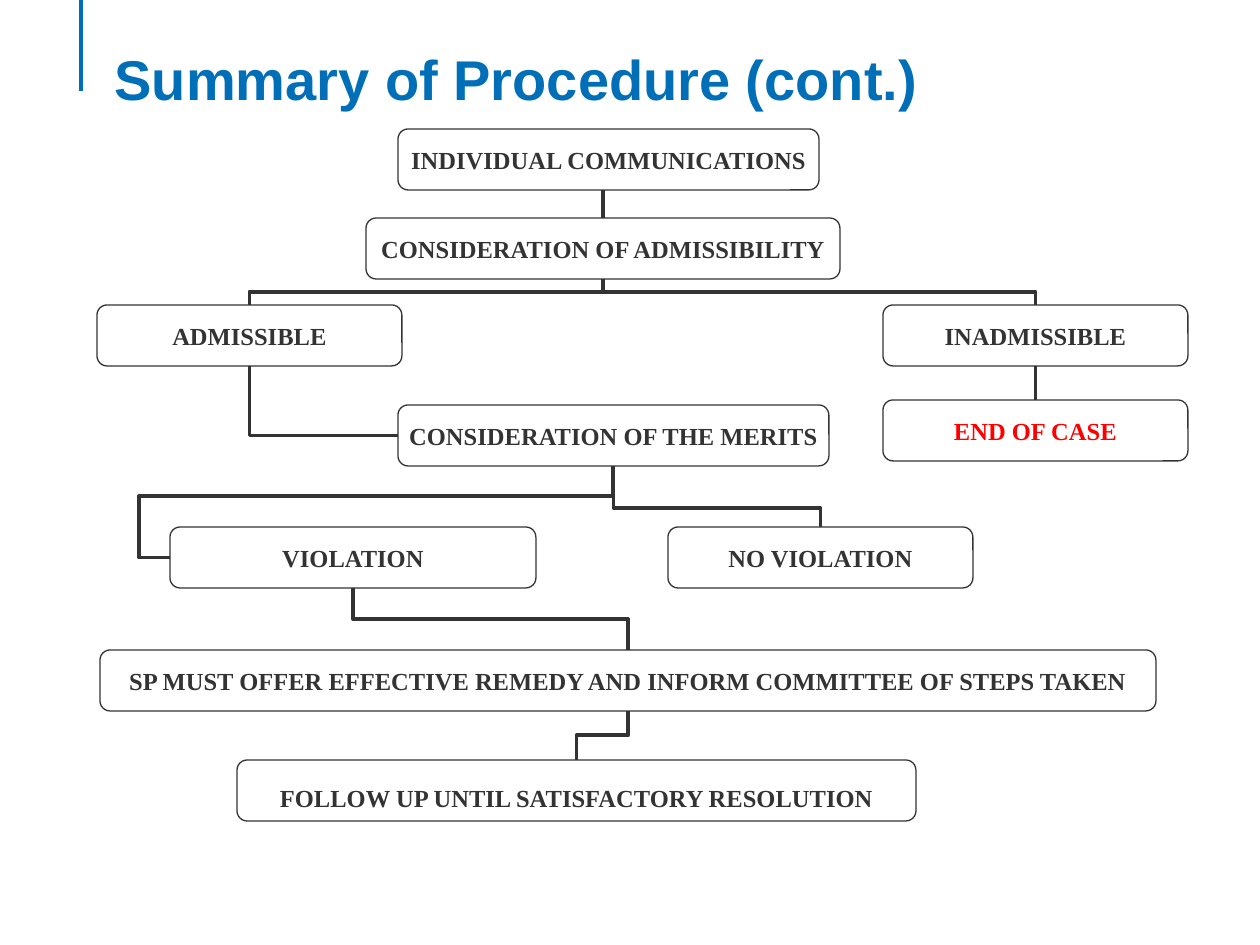
from dataclasses import dataclass
from typing import Optional

from lxml.etree import SubElement
from pptx import Presentation
from pptx.dml.color import RGBColor
from pptx.enum.shapes import MSO_CONNECTOR, MSO_SHAPE
from pptx.enum.text import MSO_ANCHOR, PP_ALIGN
from pptx.oxml.ns import qn
from pptx.util import Pt

EMU_PER_PX = 914400 / 126
TOP, LEFT, BOTTOM = 0, 1, 2


@dataclass(frozen=True)
class Theme:
    blue: RGBColor = RGBColor(0x00, 0x6F, 0xB7)
    ink: RGBColor = RGBColor(0x33, 0x33, 0x33)
    red: RGBColor = RGBColor(0xFF, 0x00, 0x00)
    white: RGBColor = RGBColor(0xFF, 0xFF, 0xFF)
    title_font: str = "Arial"
    box_font: str = "Times New Roman"
    title_size: int = 32
    box_size: int = 14
    outline: float = 0.75
    link: float = 2.25
    accent: float = 2


THEME = Theme()


@dataclass(frozen=True)
class Step:
    text: str
    left: int
    top: int
    width: int
    color: RGBColor = THEME.ink
    top_inset: int = 0
    height: int = 61


@dataclass(frozen=True)
class Link:
    """An elbow between two steps; it runs downwards unless a turn is given."""
    begin: str
    end: str
    begin_site: int = BOTTOM
    end_site: int = TOP
    preset: str = "bentConnector3"
    adjusts: tuple[float, ...] = (0.5,)
    turn: Optional[int] = None
    flip: bool = False


STEPS = {
    "communications": Step("INDIVIDUAL COMMUNICATIONS", 398, 129, 421),
    "admissibility": Step("CONSIDERATION OF ADMISSIBILITY", 366, 218, 474),
    "admissible": Step("ADMISSIBLE", 97, 305, 305),
    "inadmissible": Step("INADMISSIBLE", 883, 305, 305),
    "end": Step("END OF CASE", 883, 400, 305, THEME.red),
    "merits": Step("CONSIDERATION OF THE MERITS", 398, 405, 431),
    "no violation": Step("NO VIOLATION", 668, 527, 305),
    "violation": Step("VIOLATION", 170, 527, 366),
    "remedy": Step("SP MUST OFFER EFFECTIVE REMEDY AND INFORM COMMITTEE OF STEPS TAKEN",
                   100, 650, 1056),
    "follow up": Step("FOLLOW UP UNTIL SATISFACTORY RESOLUTION", 237, 760, 679, top_inset=14),
}

LINKS = [
    Link("admissibility", "admissible"),
    Link("admissibility", "inadmissible"),
    Link("merits", "admissible", LEFT, BOTTOM, "bentConnector2", (), turn=180),
    Link("merits", "no violation", adjusts=(0.69,)),
    Link("violation", "merits", LEFT, BOTTOM, "bentConnector4", (-0.07, 0.67), turn=180, flip=True),
    Link("violation", "remedy"),
    Link("remedy", "follow up"),
]


def px(value: float) -> int:
    return round(value * EMU_PER_PX)


def format_font(font, color: RGBColor, **values) -> None:
    for name, value in values.items():
        setattr(font, name, value)
    font.color.rgb = color


def add_title(slide, text: str) -> None:
    title = slide.shapes.title
    place = {"left": 102, "top": 38, "width": 1042, "height": 150}
    for name, value in place.items():
        setattr(title, name, px(value))
    frame = title.text_frame
    frame.vertical_anchor = MSO_ANCHOR.TOP
    para = frame.paragraphs[0]
    para.alignment = PP_ALIGN.LEFT
    span = para.add_run()
    span.text = text
    format_font(span.font, THEME.blue, name=THEME.title_font,
                size=Pt(THEME.title_size), bold=True)


def add_step(slide, step: Step):
    box = slide.shapes.add_shape(MSO_SHAPE.ROUNDED_RECTANGLE, px(step.left), px(step.top),
                                 px(step.width), px(step.height))
    box.shadow.inherit = False
    box.fill.solid()
    box.fill.fore_color.rgb = THEME.white
    box.line.color.rgb = THEME.ink
    box.line.width = Pt(THEME.outline)
    frame = box.text_frame
    layout = {"margin_left": 0, "margin_right": 0, "margin_bottom": 0,
              "margin_top": px(step.top_inset), "word_wrap": False,
              "vertical_anchor": MSO_ANCHOR.MIDDLE}
    for name, value in layout.items():
        setattr(frame, name, value)
    para = frame.paragraphs[0]
    para.alignment = PP_ALIGN.CENTER
    span = para.add_run()
    span.text = step.text
    format_font(span.font, step.color, name=THEME.box_font,
                size=Pt(THEME.box_size), bold=True)
    return box


def add_line(slide, kind, ends: tuple[int, int, int, int], color: RGBColor, weight: float):
    line = slide.shapes.add_connector(kind, *map(px, ends))
    line.line.color.rgb = color
    line.line.width = Pt(weight)
    SubElement(line._element.spPr, qn("a:effectLst"))
    return line


def add_link(slide, link: Link, boxes: dict) -> None:
    elbow = add_line(slide, MSO_CONNECTOR.ELBOW, (0, 0, 0, 0), THEME.ink, THEME.link)
    elbow.begin_connect(boxes[link.begin], link.begin_site)
    elbow.end_connect(boxes[link.end], link.end_site)
    turn, flip = link.turn, link.flip
    if turn is None:
        rightward = elbow.end_x > elbow.begin_x
        turn, flip = (270, True) if rightward else (90, False)
        # A quarter turn swaps the sides of the frame around its centre.
        shift = (elbow.width - elbow.height) // 2
        left, top, width, height = elbow.left, elbow.top, elbow.width, elbow.height
        elbow.left, elbow.top = left + shift, top - shift
        elbow.width, elbow.height = height, width
    frame = elbow._element.spPr.find(qn("a:xfrm"))
    for name, value in {"rot": turn * 60000, "flipH": int(flip), "flipV": 0}.items():
        frame.set(name, str(value))
    geometry = elbow._element.spPr.find(qn("a:prstGeom"))
    geometry.set("prst", link.preset)
    guides = geometry.find(qn("a:avLst"))
    for number, adjust in enumerate(link.adjusts, 1):
        SubElement(guides, qn("a:gd"), name=f"adj{number}", fmla=f"val {round(adjust * 100000)}")


def main() -> None:
    deck = Presentation()
    deck.slide_width, deck.slide_height = px(1260), px(945)
    page = deck.slides.add_slide(deck.slide_layouts[5])
    add_line(page, MSO_CONNECTOR.STRAIGHT, (81, 0, 81, 91), THEME.blue, THEME.accent)
    add_title(page, "Summary of Procedure (cont.)")
    boxes = {name: add_step(page, step) for name, step in STEPS.items()}

    entry = add_line(page, MSO_CONNECTOR.STRAIGHT, (603, 190, 603, 218), THEME.ink, THEME.link)
    entry.end_connect(boxes["admissibility"], TOP)
    closing = add_line(page, MSO_CONNECTOR.STRAIGHT, (1035, 366, 1035, 400),
                       THEME.ink, THEME.link)
    closing.begin_connect(boxes["inadmissible"], BOTTOM)
    closing.end_connect(boxes["end"], TOP)
    for link in LINKS:
        add_link(page, link, boxes)
    deck.save("out.pptx")


if __name__ == "__main__":
    main()
